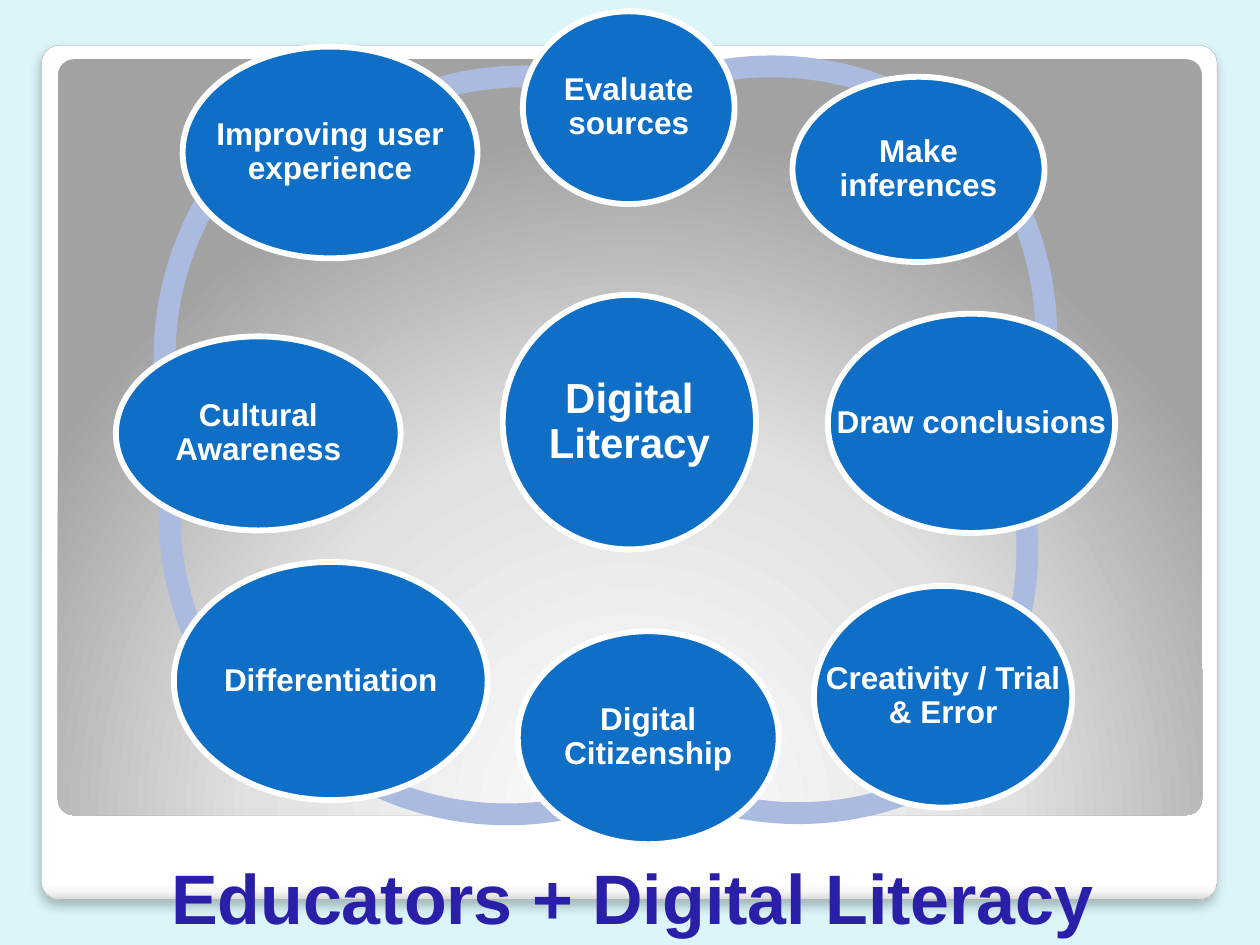
"""Build the digital literacy slide: a hub circled by eight skills."""
from typing import NamedTuple

from lxml import etree
from pptx import Presentation
from pptx import util as u
from pptx.dml.color import RGBColor
from pptx.enum import shapes, text
from pptx.oxml.ns import nsdecls, qn

COLORS = {
    "background": "DBF5F9",
    "title": "291FA9",
    "bubble": "0F6FC6",
    "ring": "ABBBDF",
    "white": "FFFFFF",
    "frame_line": "A4A4A4",
    "shadow": "000000",
}
FONT = "Arial"
RING_SIZE = 5.09
RING_THICKNESS = 0.034


class Box(NamedTuple):
    left: float
    top: float
    width: float
    height: float

    def lengths(self) -> list:
        return [u.Inches(value) for value in self]


class Arc(NamedTuple):
    left: float
    top: float
    start: float
    end: float


class Bubble(NamedTuple):
    label: str
    box: Box
    size: int = 18


class Panel(NamedTuple):
    box: Box
    stops: tuple
    direction: str


FRAME = Panel(
    Box(0.33, 0.36, 9.33, 6.78),
    ((0, "FFFFFF"), (98, "FFFFFF"), (99, "F7F7F7"), (100, "DADADA")),
    f'<a:lin {nsdecls("a")} ang="5400000" scaled="0"/>',
)
BACKDROP = Panel(
    Box(0.46, 0.47, 9.08, 6),
    ((0, "FFFFFF"), (55, "E1E1E1"), (100, "A2A2A2")),
    f'<a:path {nsdecls("a")} path="circle">'
    '<a:fillToRect l="50000" t="175000" r="50000" b="-75000"/></a:path>',
)
ARCS = [
    Arc(1.61, 0.52, 232.81, 290.26),
    Arc(1.22, 0.29, 166.81, 221.52),
    Arc(1.26, 1.54, 139.63, 188.04),
    Arc(1.48, 1.46, 69.3, 130.89),
    Arc(3.79, 1.45, 53.94, 110.11),
    Arc(3.15, 1.81, 340.32, 32.19),
    Arc(3.3, 0.12, 323.86, 12.3),
    Arc(3.58, 0.44, 254.07, 310.13),
]
BUBBLES = [
    Bubble("Digital Literacy", Box(3.99, 2.34, 2.01, 2.02), 24),
    Bubble("Evaluate sources", Box(4.15, 0.09, 1.68, 1.53)),
    Bubble("Make inferences", Box(6.29, 0.61, 2, 1.47)),
    Bubble("Draw conclusions", Box(6.57, 2.49, 2.28, 1.74)),
    Bubble("Creativity / Trial & Error", Box(6.46, 4.65, 2.05, 1.76)),
    Bubble("Digital Citizenship", Box(4.11, 5.01, 2.07, 1.69)),
    Bubble("Differentiation", Box(1.38, 4.46, 2.49, 1.89)),
    Bubble("Cultural Awareness", Box(0.92, 2.67, 2.26, 1.54)),
    Bubble("Improving user experience", Box(1.45, 0.37, 2.34, 1.68)),
]


def color(name: str) -> RGBColor:
    return RGBColor.from_string(COLORS[name])


def add_plain(page, kind, box: Box):
    shape = page.shapes.add_shape(kind, *box.lengths())
    shape.line.fill.background()
    shape.shadow.inherit = False
    return shape


def add_panel(page, panel: Panel):
    shape = add_plain(page, shapes.MSO_SHAPE.ROUNDED_RECTANGLE, panel.box)
    shape.adjustments[0] = 0.021
    shape.fill.gradient()
    gradient = shape.element.spPr.find(qn("a:gradFill"))
    for child in list(gradient):
        gradient.remove(child)
    stops = etree.SubElement(gradient, qn("a:gsLst"))
    for percent, tone in panel.stops:
        stop = etree.SubElement(stops, qn("a:gs"), pos=str(percent * 1000))
        etree.SubElement(stop, qn("a:srgbClr"), val=tone)
    gradient.append(etree.fromstring(panel.direction))
    return shape


def add_frame(page) -> None:
    frame = add_panel(page, FRAME)
    frame.line.color.rgb = color("frame_line")
    frame.line.width = u.Pt(0.16)
    effects = frame.element.spPr.find(qn("a:effectLst"))
    shadow = etree.SubElement(
        effects, qn("a:outerShdw"), blurRad=str(u.Pt(6)), dist=str(u.Pt(4)),
        dir="5400000", algn="ctr", rotWithShape="0")
    tone = etree.SubElement(shadow, qn("a:srgbClr"), val=COLORS["shadow"])
    etree.SubElement(tone, qn("a:alpha"), val="25000")


def write(shape, label: str, size: int, tone: str) -> None:
    frame = shape.text_frame
    frame.word_wrap = True
    frame.auto_size = text.MSO_AUTO_SIZE.NONE
    para = frame.paragraphs[0]
    para.alignment = text.PP_ALIGN.CENTER
    span = para.add_run()
    span.text = label
    span.font.name = FONT
    span.font.size = u.Pt(size)
    span.font.bold = True
    span.font.color.rgb = color(tone)


def add_title(page, label: str) -> None:
    title = page.shapes.title
    title.left, title.top, title.width, title.height = Box(0.55, 6.43, 8.94, 1.07).lengths()
    title.text_frame.vertical_anchor = text.MSO_ANCHOR.BOTTOM
    write(title, label, 40, "title")
    title.element.getparent().append(title.element)


def add_arc(page, arc: Arc) -> None:
    box = Box(arc.left, arc.top, RING_SIZE, RING_SIZE)
    shape = add_plain(page, shapes.MSO_SHAPE.BLOCK_ARC, box)
    shape.adjustments[0] = arc.start * 0.6
    shape.adjustments[1] = arc.end * 0.6
    shape.adjustments[2] = RING_THICKNESS
    shape.fill.solid()
    shape.fill.fore_color.rgb = color("ring")


def add_bubble(page, bubble: Bubble) -> None:
    oval = add_plain(page, shapes.MSO_SHAPE.OVAL, bubble.box)
    oval.fill.solid()
    oval.fill.fore_color.rgb = color("bubble")
    oval.line.color.rgb = color("white")
    oval.line.width = u.Pt(3.35)
    label = page.shapes.add_textbox(*bubble.box.lengths())
    write(label, bubble.label, bubble.size, "white")
    frame = label.text_frame
    frame.vertical_anchor = text.MSO_ANCHOR.MIDDLE
    frame.margin_left = frame.margin_right = u.Inches(0.03)
    frame.margin_top = frame.margin_bottom = u.Inches(0.03)
    frame.paragraphs[0].line_spacing = 0.9


def main() -> None:
    deck = Presentation()
    deck.slide_width, deck.slide_height = u.Inches(10), u.Inches(7.5)
    page = deck.slides.add_slide(deck.slide_layouts.get_by_name("Title Only"))
    page.background.fill.solid()
    page.background.fill.fore_color.rgb = color("background")
    add_frame(page)
    add_panel(page, BACKDROP)
    add_title(page, "Educators + Digital Literacy")
    for arc in ARCS:
        add_arc(page, arc)
    for bubble in BUBBLES:
        add_bubble(page, bubble)
    deck.save("out.pptx")


if __name__ == "__main__":
    main()
